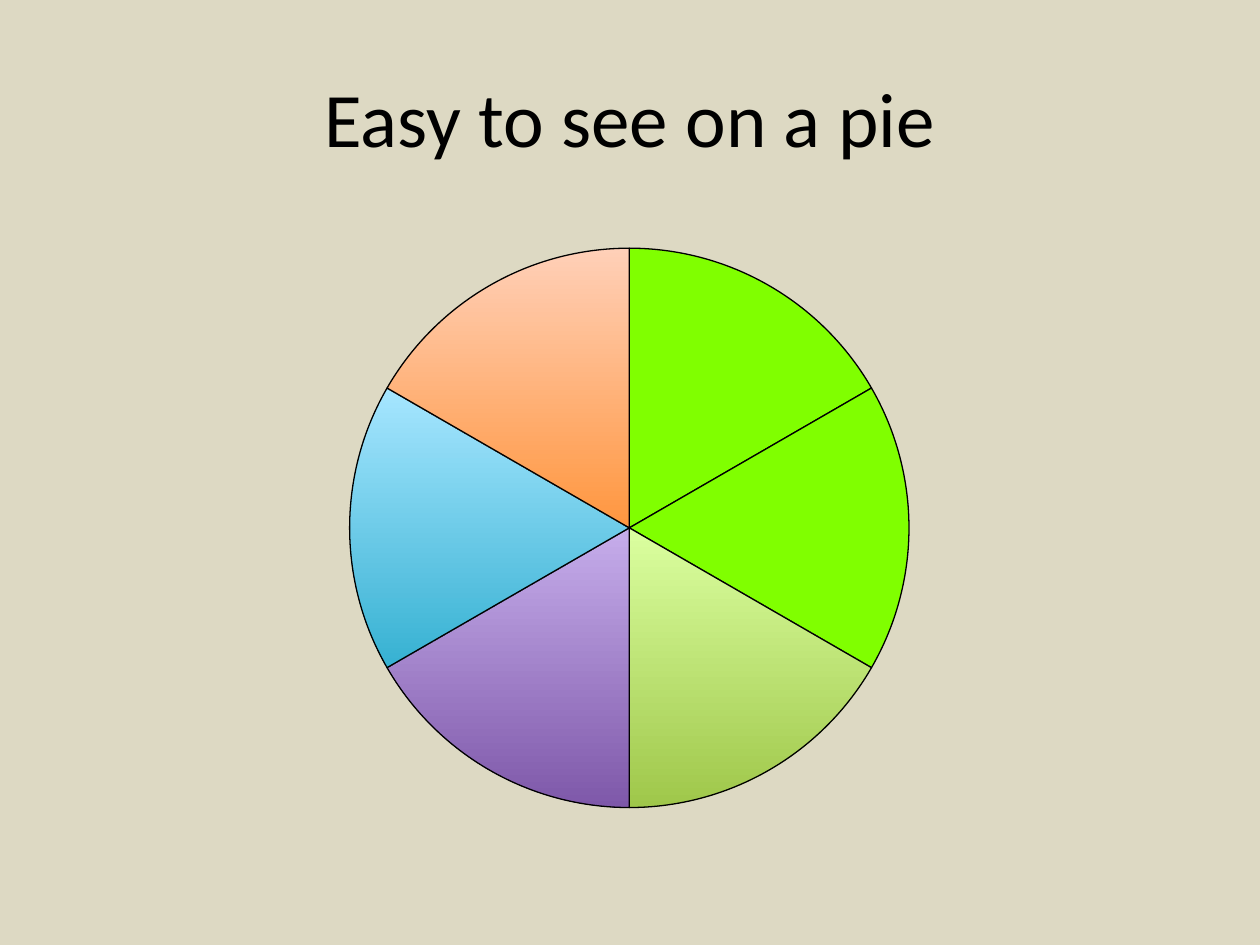
from lxml import etree
from pptx import Presentation
from pptx.chart.data import CategoryChartData
from pptx.dml.color import RGBColor
from pptx.enum.chart import XL_CHART_TYPE as ChartType
from pptx.enum.text import MSO_ANCHOR as Anchor, PP_ALIGN as Align
from pptx.oxml.ns import qn
from pptx.util import Inches, Pt

FONT = "Calibri"
BACKGROUND = RGBColor(0xDD, 0xD9, 0xC3)
BLACK = RGBColor(0x00, 0x00, 0x00)
LIME = RGBColor(0x80, 0xFF, 0x00)

# Top and bottom colour of each slice, clockwise from twelve o'clock
SLICES = [
    (LIME, LIME),
    (LIME, LIME),
    (RGBColor(0xDB, 0xFF, 0xA0), RGBColor(0x9F, 0xC7, 0x4A)),
    (RGBColor(0xC6, 0xAD, 0xEB), RGBColor(0x7E, 0x58, 0xA9)),
    (RGBColor(0xA6, 0xE6, 0xFF), RGBColor(0x36, 0xB1, 0xD2)),
    (RGBColor(0xFF, 0xD0, 0xB8), RGBColor(0xFF, 0x96, 0x3F)),
]
SHARE = 17
PIE_DIAMETER = Inches(4.44)


def add_title(slide, text, left, top, width, height):
    tf = slide.shapes.add_textbox(left, top, width, height).text_frame
    tf.word_wrap = True
    tf.vertical_anchor = Anchor.MIDDLE
    p = tf.paragraphs[0]
    p.alignment = Align.CENTER
    r = p.add_run()
    r.text = text
    r.font.name = FONT
    r.font.size = Pt(44)
    r.font.color.rgb = BLACK


def center_plot(chart, width, height):
    """Fix the pie's diameter and centre it in the chart frame."""
    plot_area = chart.plots[0]._element.getparent()
    for old in plot_area.findall(qn("c:layout")):
        plot_area.remove(old)
    layout = etree.Element(qn("c:layout"))
    manual = etree.SubElement(layout, qn("c:manualLayout"))
    w, h = PIE_DIAMETER / width, PIE_DIAMETER / height
    settings = [
        ("layoutTarget", "inner"), ("xMode", "edge"), ("yMode", "edge"),
        ("x", (1 - w) / 2), ("y", (1 - h) / 2), ("w", w), ("h", h),
    ]
    for tag, value in settings:
        etree.SubElement(manual, qn(f"c:{tag}")).set("val", str(value))
    plot_area.insert(0, layout)


def fill_slice(fill, top_color, bottom_color):
    if top_color == bottom_color:
        fill.solid()
        fill.fore_color.rgb = top_color
        return
    fill.gradient()
    fill.gradient_angle = 270
    for stop, color in zip(fill.gradient_stops, (top_color, bottom_color)):
        stop.color.rgb = color


def add_pie(slide, left, top, width, height):
    data = CategoryChartData()
    data.categories = [str(n) for n in range(1, len(SLICES) + 1)]
    data.add_series("Series 1", [SHARE] * len(SLICES))
    chart = slide.shapes.add_chart(
        ChartType.PIE, left, top, width, height, data).chart
    chart.has_legend = False
    chart.has_title = False
    chart.font.name = FONT
    chart.font.size = Pt(10)
    chart.font.color.rgb = BLACK
    chart.plots[0].vary_by_categories = True
    center_plot(chart, width, height)

    # Slice fills and outlines
    series = chart.plots[0].series[0]
    for i, colors in enumerate(SLICES):
        fmt = series.points[i].format
        fill_slice(fmt.fill, *colors)
        fmt.line.color.rgb = BLACK
        fmt.line.width = Pt(0.75)


def main():
    prs = Presentation()
    prs.slide_width, prs.slide_height = Inches(10), Inches(7.5)
    slide = prs.slides.add_slide(prs.slide_layouts[6])
    bg = slide.background.fill
    bg.solid()
    bg.fore_color.rgb = BACKGROUND

    add_title(slide, "Easy to see on a pie",
              Inches(0.5), Inches(0.3), Inches(9), Inches(1.25))
    add_pie(slide, Inches(1.06), Inches(1.83), Inches(7.87), Inches(4.72))
    prs.save("out.pptx")


if __name__ == "__main__":
    main()
